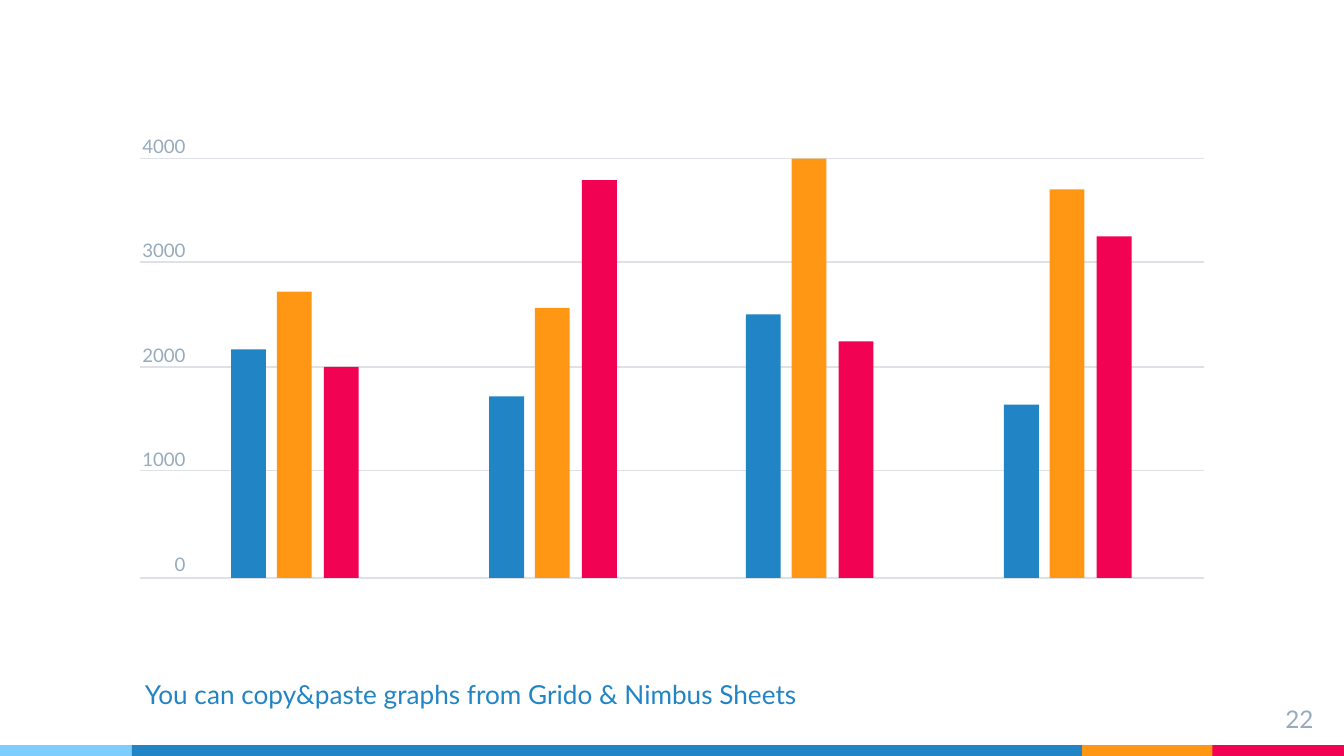
from dataclasses import dataclass
from typing import Optional

import pptx
import pptx.dml.color
import pptx.enum.shapes
import pptx.enum.text
import pptx.oxml.ns
import pptx.slide
import pptx.util
from lxml import etree

Inches = pptx.util.Inches
Pt = pptx.util.Pt
ALIGN = pptx.enum.text.PP_ALIGN
ANCHOR = pptx.enum.text.MSO_ANCHOR

COLORS = {
    "sky": "7ECEFD",
    "blue": "2185C5",
    "orange": "FF9715",
    "pink": "F20253",
    "grey": "97ABBC",
    "grid": "DEE2E6",
}
FONT = "Lato"
SLIDE_WIDTH = 10
SLIDE_HEIGHT = SLIDE_WIDTH * 9 / 16

FOOTER_HEIGHT = 0.08
FOOTER_TOP = SLIDE_HEIGHT - FOOTER_HEIGHT
GRID_LEFT, GRID_RIGHT = 1.04, 8.96
GRID_LEVELS = [1.18, 1.95, 2.73, 3.5, 4.3]
BASELINE = GRID_LEVELS[-1]
BAR_WIDTH = 0.26
GROUP_LEFTS = [1.72, 3.64, 5.55, 7.47]


@dataclass
class Band:
    left: float
    width: float
    color: str


@dataclass
class Series:
    color: str
    offset: float
    tops: list[float]


@dataclass
class Label:
    left: float
    top: float
    width: float
    height: float
    lines: list[str]
    size: float
    color: str
    align: Optional[ALIGN] = None
    anchor: ANCHOR = ANCHOR.TOP
    inset: float = 0.1
    first_space: float = 0
    line_space: float = 0


FOOTER_BANDS = [
    Band(8.05, 0.98, "orange"),
    Band(9.02, 0.98, "pink"),
    Band(0, 0.98, "sky"),
    Band(0.98, 7.07, "blue"),
]
SERIES = [
    Series("blue", 0, [2.6, 2.95, 2.34, 3.01]),
    Series("orange", 0.34, [2.17, 2.29, 1.18, 1.41]),
    Series("pink", 0.69, [2.73, 1.34, 2.54, 1.76]),
]
CAPTION = Label(0.98, 5, 7.92, 0.38,
                ["You can copy&paste graphs from Grido & Nimbus Sheets"],
                14, "blue", anchor=ANCHOR.BOTTOM, first_space=3.6)
PAGE_NUMBER = Label(9.27, 5.14, 0.6, 0.34, ["22"], 13, "grey", ALIGN.RIGHT)
AXIS_VALUES = Label(GRID_LEFT, 1, 0.34, 3.31,
                    [str(value) for value in range(4000, -1, -1000)],
                    10, "grey", ALIGN.RIGHT, inset=0, line_space=44)


def rgb(name: str) -> pptx.dml.color.RGBColor:
    return pptx.dml.color.RGBColor.from_string(COLORS[name])


def draw_block(slide: pptx.slide.Slide, left: float, top: float,
               width: float, height: float, color: str) -> None:
    block = slide.shapes.add_shape(
        pptx.enum.shapes.MSO_SHAPE.RECTANGLE,
        Inches(left), Inches(top), Inches(width), Inches(height))
    block.shadow.inherit = False
    block.fill.solid()
    block.fill.fore_color.rgb = rgb(color)
    block.line.fill.background()


def draw_gridline(slide: pptx.slide.Slide, level: float) -> None:
    gridline = slide.shapes.add_connector(
        pptx.enum.shapes.MSO_CONNECTOR.STRAIGHT,
        Inches(GRID_LEFT), Inches(level), Inches(GRID_RIGHT), Inches(level))
    gridline.line.color.rgb = rgb("grid")
    gridline.line.width = Pt(0.75)
    etree.SubElement(gridline._element.spPr,
                     pptx.oxml.ns.qn("a:effectLst"))


def draw_label(slide: pptx.slide.Slide, label: Label) -> None:
    box = slide.shapes.add_textbox(
        Inches(label.left), Inches(label.top),
        Inches(label.width), Inches(label.height))
    frame = box.text_frame
    frame.word_wrap = True
    frame.vertical_anchor = label.anchor
    frame.margin_left = frame.margin_right = Inches(label.inset)
    frame.margin_top = frame.margin_bottom = Inches(label.inset)
    frame.text = "\n".join(label.lines)
    for index, paragraph in enumerate(frame.paragraphs):
        paragraph.alignment = label.align
        paragraph.space_before = Pt(
            label.line_space if index else label.first_space)
        font = paragraph.runs[0].font
        font.name = FONT
        font.size = Pt(label.size)
        font.color.rgb = rgb(label.color)


def main() -> None:
    deck = pptx.Presentation()
    deck.slide_width = Inches(SLIDE_WIDTH)
    deck.slide_height = Inches(SLIDE_HEIGHT)
    slide = deck.slides.add_slide(deck.slide_layouts.get_by_name("Blank"))

    for band in FOOTER_BANDS:
        draw_block(slide, band.left, FOOTER_TOP, band.width, FOOTER_HEIGHT,
                   band.color)
    draw_label(slide, CAPTION)
    draw_label(slide, PAGE_NUMBER)
    for level in GRID_LEVELS:
        draw_gridline(slide, level)
    draw_label(slide, AXIS_VALUES)
    for group, group_left in enumerate(GROUP_LEFTS):
        for series in SERIES:
            top = series.tops[group]
            draw_block(slide, group_left + series.offset, top, BAR_WIDTH,
                       BASELINE - top, series.color)

    deck.save("out.pptx")


if __name__ == "__main__":
    main()
